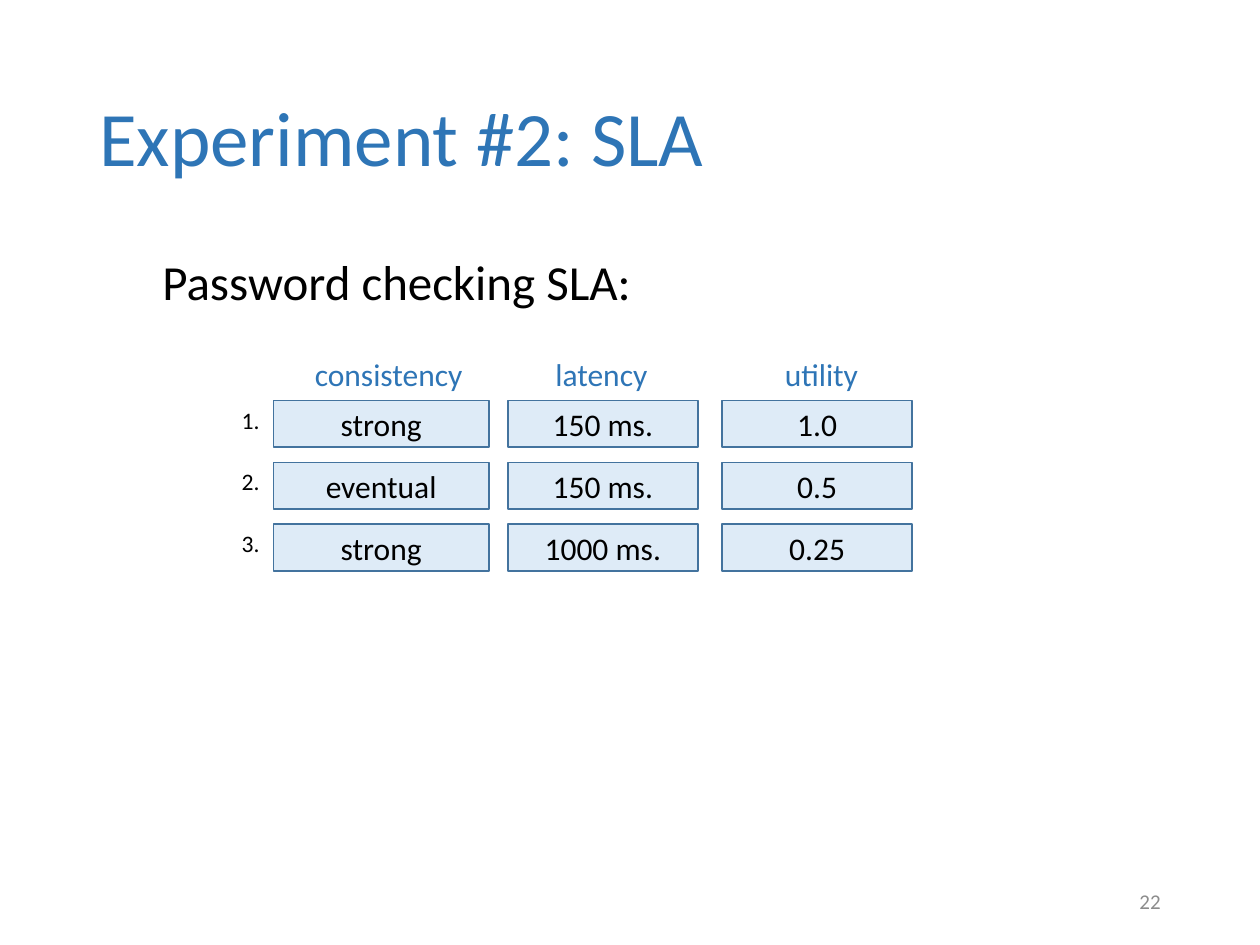
from pptx import Presentation
from pptx.dml.color import RGBColor
from pptx.enum.shapes import MSO_SHAPE
from pptx.enum.text import MSO_ANCHOR as ANCHOR, PP_ALIGN as ALIGN
from pptx.util import Inches, Pt

COLORS = {"heading": "2E75B6", "text": "000000", "number": "8C8C8C",
          "cell": "DEEBF7", "border": "43739E"}

prs = Presentation()
prs.slide_width, prs.slide_height = Inches(10), Inches(7.5)
slide = prs.slides.add_slide(prs.slide_layouts[6])


def write(shape, text, size, color, align=ALIGN.LEFT, anchor=ANCHOR.TOP, wrap=True):
    frame = shape.text_frame
    frame.text = text
    frame.word_wrap = wrap
    frame.vertical_anchor = anchor
    paragraph = frame.paragraphs[0]
    paragraph.alignment = align
    font = paragraph.runs[0].font
    font.name, font.size = "Calibri", Pt(size)
    font.color.rgb = RGBColor.from_string(COLORS[color])
    return paragraph


def add_text(left, top, width, height, *args, **kwargs):
    box = slide.shapes.add_textbox(Inches(left), Inches(top), Inches(width), Inches(height))
    return write(box, *args, **kwargs)


title = add_text(0.69, 0.4, 8.62, 1.45, "Experiment #2: SLA", 44, "heading",
                 anchor=ANCHOR.MIDDLE)
title.line_spacing = 0.9
intro = add_text(0.69, 2, 8.62, 0.77, "\tPassword checking SLA:", 28, "text")
intro.line_spacing = 0.9
intro.space_before = Pt(10)
add_text(7.06, 6.95, 2.25, 0.4, "22", 12, "number", ALIGN.RIGHT, ANCHOR.MIDDLE)

# heading, heading left, heading width, cell left, cell width, values
columns = [
    ("consistency", 2.4, 1.41, 2.17, 1.71, ["strong", "eventual", "strong"]),
    ("latency", 4.31, 0.94, 4.03, 1.51, ["150 ms.", "150 ms.", "1000 ms."]),
    ("utility", 6.13, 0.81, 5.73, 1.51, ["1.0", "0.5", "0.25"]),
]
row_tops = [3.18 + 0.49 * row for row in range(3)]

for number, top in enumerate(row_tops, start=1):
    add_text(1.82, top - 0.01, 0.35, 0.33, f"{number}.", 13.5, "text", wrap=False)

for heading, heading_left, heading_width, left, width, values in columns:
    add_text(heading_left, 2.77, heading_width, 0.4, heading, 18, "heading", wrap=False)
    for top, value in zip(row_tops, values):
        cell = slide.shapes.add_shape(MSO_SHAPE.RECTANGLE, Inches(left), Inches(top),
                                      Inches(width), Inches(0.37))
        cell.shadow.inherit = False
        cell.fill.solid()
        cell.fill.fore_color.rgb = RGBColor.from_string(COLORS["cell"])
        cell.line.color.rgb = RGBColor.from_string(COLORS["border"])
        cell.line.width = Pt(1)
        write(cell, value, 18, "text", ALIGN.CENTER, ANCHOR.MIDDLE)

prs.save("out.pptx")
